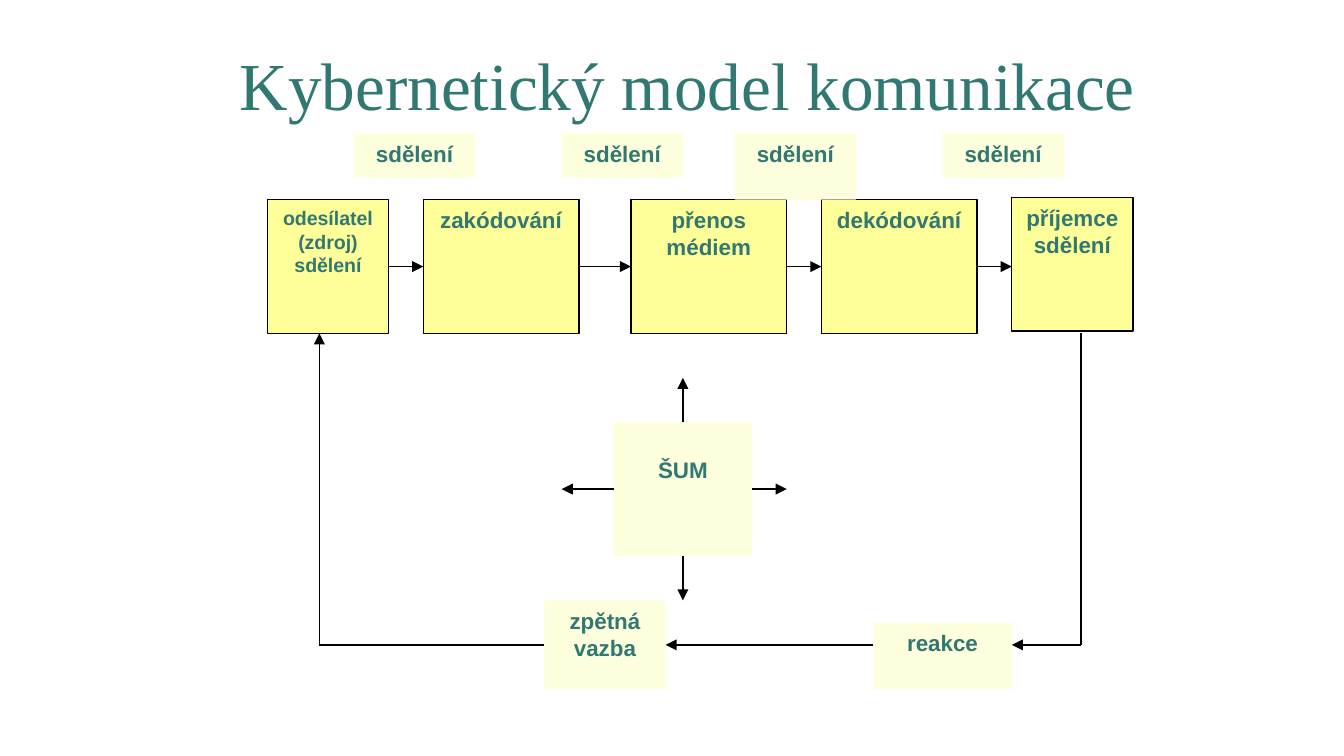
from dataclasses import dataclass
from typing import Optional

from lxml import etree
from pptx import Presentation
from pptx import util as u
from pptx.dml.color import RGBColor
from pptx.enum import shapes, text
from pptx.oxml.ns import qn


@dataclass(frozen=True)
class Theme:
    ink: RGBColor = RGBColor(0x30, 0x78, 0x71)
    line: RGBColor = RGBColor(0, 0, 0)
    stage: RGBColor = RGBColor(0xFF, 0xFF, 0x99)
    label: RGBColor = RGBColor(0xFD, 0xFF, 0xDD)
    title_font: str = "Times New Roman"
    body_font: str = "Arial"
    title_size: float = 36
    body_size: float = 12
    small_size: float = 10.5
    line_width: float = 0.75


@dataclass(frozen=True)
class Block:
    """A text block; position and size in grid columns and rows."""
    words: str
    col: float
    row: float
    cols: float
    rows: float
    outlined: bool = False
    size: float = Theme.body_size
    top_inset: float = 0.05


@dataclass(frozen=True)
class Joint:
    block: str
    side: int


@dataclass(frozen=True)
class Link:
    """A straight line between two grid points, joined to blocks where given."""
    start: tuple[float, float]
    end: tuple[float, float]
    begin_joint: Optional[Joint] = None
    end_joint: Optional[Joint] = None
    arrow: bool = True


THEME = Theme()
WIDTH = 10
HEIGHT = WIDTH * 9 / 16
GRID_LEFT, GRID_RIGHT = 1.99, 8.43
GRID_TOP, GRID_BOTTOM = 0.99, 5.13
COLUMN = (GRID_RIGHT - GRID_LEFT) / 50
ROW = (GRID_BOTTOM - GRID_TOP) / 25
TOP, LEFT, BOTTOM, RIGHT = range(4)

STAGES = {
    "sender": Block("odesílatel (zdroj) sdělení", 0, 3, 7, 6, True, THEME.small_size),
    "encoding": Block("zakódování", 9, 3, 9, 6, True),
    "medium": Block("přenos médiem", 21, 3, 9, 6, True),
    "decoding": Block("dekódování", 32, 3, 9, 6, True),
    "receiver": Block("příjemce sdělení", 43, 2.9, 7, 6, True),
}
LOOP = {
    "noise": Block("ŠUM", 20, 13, 8, 6, top_inset=0.25),
    "reaction": Block("reakce", 35, 22, 8, 3),
    "feedback": Block("zpětná vazba", 16, 21, 7, 4),
}
MESSAGES = [
    Block("sdělení", col, 0, 7, rows)
    for col, rows in ((5, 2), (17, 2), (27, 3), (39, 2))
]
LINKS = [
    Link((7, 6), (9, 6), Joint("sender", RIGHT), Joint("encoding", LEFT)),
    Link((18, 6), (21, 6), Joint("encoding", RIGHT), Joint("medium", LEFT)),
    Link((30, 6), (32, 6), Joint("medium", RIGHT), Joint("decoding", LEFT)),
    Link((41, 6), (43, 6), Joint("decoding", RIGHT)),
    Link((24, 13), (24, 11), Joint("noise", TOP)),
    Link((20, 16), (17, 16), Joint("noise", LEFT)),
    Link((24, 19), (24, 21), Joint("noise", BOTTOM)),
    Link((28, 16), (30, 16), Joint("noise", RIGHT)),
    Link((47, 9), (47, 23), arrow=False),
    Link((47, 23), (43, 23)),
    Link((35, 23), (23, 23), None, Joint("feedback", RIGHT)),
    Link((16, 23), (3, 23), Joint("feedback", LEFT), arrow=False),
    Link((3, 23), (3, 9)),
]


def grid_x(col: float) -> int:
    return u.Inches(GRID_LEFT + col * COLUMN)


def grid_y(row: float) -> int:
    return u.Inches(GRID_TOP + row * ROW)


def write(box, words: str, font: str, size: float, bold: bool, top_inset: float) -> None:
    frame = box.text_frame
    frame.text = words
    frame.word_wrap = True
    frame.vertical_anchor = text.MSO_ANCHOR.TOP
    frame.margin_left = frame.margin_right = u.Inches(0.07)
    frame.margin_top, frame.margin_bottom = u.Inches(top_inset), u.Inches(0.05)
    para = frame.paragraphs[0]
    para.alignment = text.PP_ALIGN.CENTER
    for span in para.runs:
        span.font.name, span.font.size, span.font.bold = font, u.Pt(size), bold
        span.font.color.rgb = THEME.ink


def add_title(page, words: str) -> None:
    box = page.shapes.add_textbox(
        u.Inches(1.54), u.Inches(0.27), u.Inches(7.15), u.Inches(0.29))
    write(box, words, THEME.title_font, THEME.title_size, False, 0.05)


def add_block(page, block: Block):
    box = page.shapes.add_shape(
        shapes.MSO_SHAPE.RECTANGLE, grid_x(block.col), grid_y(block.row),
        u.Inches(block.cols * COLUMN), u.Inches(block.rows * ROW))
    box.shadow.inherit = False
    box.fill.solid()
    box.fill.fore_color.rgb = THEME.stage if block.outlined else THEME.label
    if block.outlined:
        box.line.color.rgb = THEME.line
        box.line.width = u.Pt(THEME.line_width)
    else:
        box.line.fill.background()
    write(box, block.words, THEME.body_font, block.size, True, block.top_inset)
    return box


def add_link(page, link: Link, boxes: dict) -> None:
    connector = page.shapes.add_connector(
        shapes.MSO_CONNECTOR.STRAIGHT, grid_x(link.start[0]), grid_y(link.start[1]),
        grid_x(link.end[0]), grid_y(link.end[1]))
    if link.begin_joint:
        connector.begin_connect(boxes[link.begin_joint.block], link.begin_joint.side)
    if link.end_joint:
        connector.end_connect(boxes[link.end_joint.block], link.end_joint.side)
    connector.line.color.rgb = THEME.line
    connector.line.width = u.Pt(THEME.line_width)
    properties = connector.line._get_or_add_ln()
    if link.arrow:
        etree.SubElement(properties, qn("a:tailEnd"), type="triangle")
    etree.SubElement(properties.getparent(), qn("a:effectLst"))


def main() -> None:
    deck = Presentation()
    deck.slide_width, deck.slide_height = u.Inches(WIDTH), u.Inches(HEIGHT)
    page = deck.slides.add_slide(deck.slide_layouts[6])
    add_title(page, "Kybernetický model komunikace")
    boxes = {name: add_block(page, block) for name, block in (STAGES | LOOP).items()}
    for link in LINKS:
        add_link(page, link, boxes)
    for message in MESSAGES:
        add_block(page, message)
    deck.save("out.pptx")


if __name__ == "__main__":
    main()
